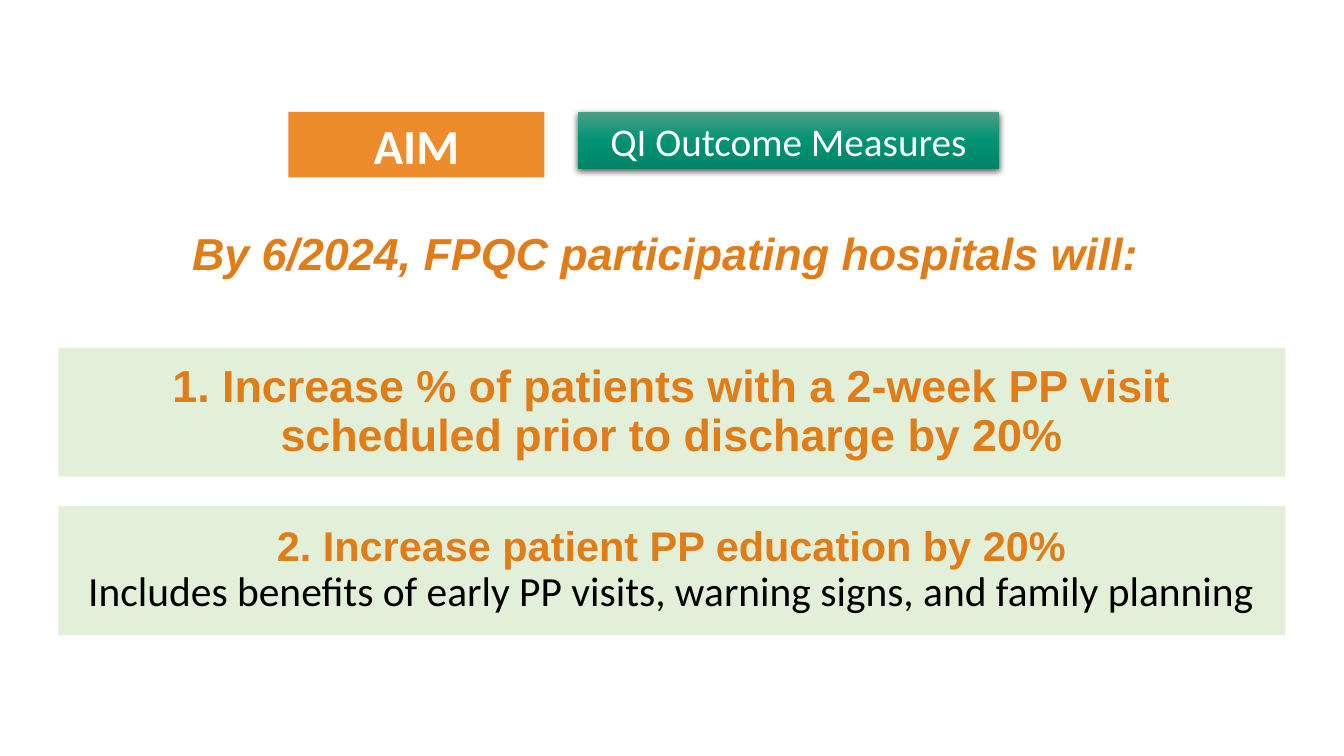
from lxml import etree
from pptx import Presentation
from pptx.dml.color import RGBColor
from pptx.enum.shapes import MSO_SHAPE
from pptx.enum.text import MSO_ANCHOR, PP_ALIGN
from pptx.oxml import parse_xml
from pptx.oxml.ns import nsdecls, qn
from pptx.util import Inches, Pt

COLORS = {
    "orange_text": "E17D19",
    "orange_fill": "EC8C2C",
    "pale_green": "E2F0D9",
    "green_top": "4B9F84",
    "green_middle": "009374",
    "green_bottom": "008367",
    "white": "FFFFFF",
    "black": "000000",
}


def add_block(left, top, width, height, fill=None):
    block = slide.shapes.add_shape(
        MSO_SHAPE.RECTANGLE, Inches(left), Inches(top), Inches(width), Inches(height))
    block.shadow.inherit = False
    block.line.fill.background()
    if fill:
        block.fill.solid()
        block.fill.fore_color.rgb = RGBColor.from_string(COLORS[fill])
    return block


def write(box, lines, margin=None, spacing=None, anchor=MSO_ANCHOR.MIDDLE):
    frame = box.text_frame
    frame.word_wrap = True
    frame.vertical_anchor = anchor
    if margin is not None:
        frame.margin_left = frame.margin_right = Inches(margin)
        frame.margin_top = frame.margin_bottom = Inches(margin)
    frame.text = "\n".join(line[0] for line in lines)
    for paragraph, (_, size, font, color, bold, italic) in zip(frame.paragraphs, lines):
        paragraph.alignment = PP_ALIGN.CENTER
        paragraph.line_spacing = spacing
        for run in paragraph.runs:
            run.font.size = Pt(size)
            run.font.name = font
            run.font.bold = bold
            run.font.italic = italic
            run.font.color.rgb = RGBColor.from_string(COLORS[color])


prs = Presentation()
prs.slide_width = Inches(13.33)
prs.slide_height = Inches(7.5)
slide = prs.slides.add_slide(prs.slide_layouts[6])

lead_in = slide.shapes.add_textbox(Inches(0.58), Inches(1.9), Inches(12.17), Inches(1.27))
write(lead_in, [("By 6/2024, FPQC participating hospitals will: ",
                 32, "Arial", "orange_text", True, True)], 0.05, 0.9)

goals = [
    [("1. Increase % of patients with a 2-week PP visit scheduled prior to discharge by 20%",
      32, "Arial", "orange_text", True, False)],
    [("2. Increase patient PP education by 20%", 29.6, "Arial", "orange_text", True, False),
     ("Includes benefits of early PP visits, warning signs, and family planning",
      29.6, "Calibri", "black", False, False)],
]
for index, goal_lines in enumerate(goals):
    goal = add_block(0.58, 3.45 + 1.57 * index, 12.17, 1.28, "pale_green")
    write(goal, goal_lines, 0.05, 0.9)

aim = add_block(2.86, 1.11, 2.54, 0.65, "orange_fill")
write(aim, [("AIM", 35, "Calibri", "white", True, False)])

measures = add_block(5.73, 1.11, 4.18, 0.57)
write(measures, [("QI Outcome Measures", 28, "Calibri", "white", False, False)],
      anchor=MSO_ANCHOR.TOP)
measures.fill.gradient()
measures.fill.gradient_angle = 270
properties = measures.element.spPr
stops = properties.find(".//" + qn("a:gsLst"))
for stop in list(stops):
    stops.remove(stop)
for position, color in [(0, "green_top"), (50, "green_middle"), (100, "green_bottom")]:
    stop = etree.SubElement(stops, qn("a:gs"), pos=str(position * 1000))
    etree.SubElement(stop, qn("a:srgbClr"), val=COLORS[color])
properties.find(qn("a:effectLst")).append(parse_xml(
    f'<a:outerShdw {nsdecls("a")} blurRad="{Pt(4.5)}" dist="{Pt(1.5)}" dir="5400000" '
    f'algn="ctr" rotWithShape="0"><a:srgbClr val="{COLORS["black"]}">'
    '<a:alpha val="63000"/></a:srgbClr></a:outerShdw>'))

prs.save("out.pptx")
